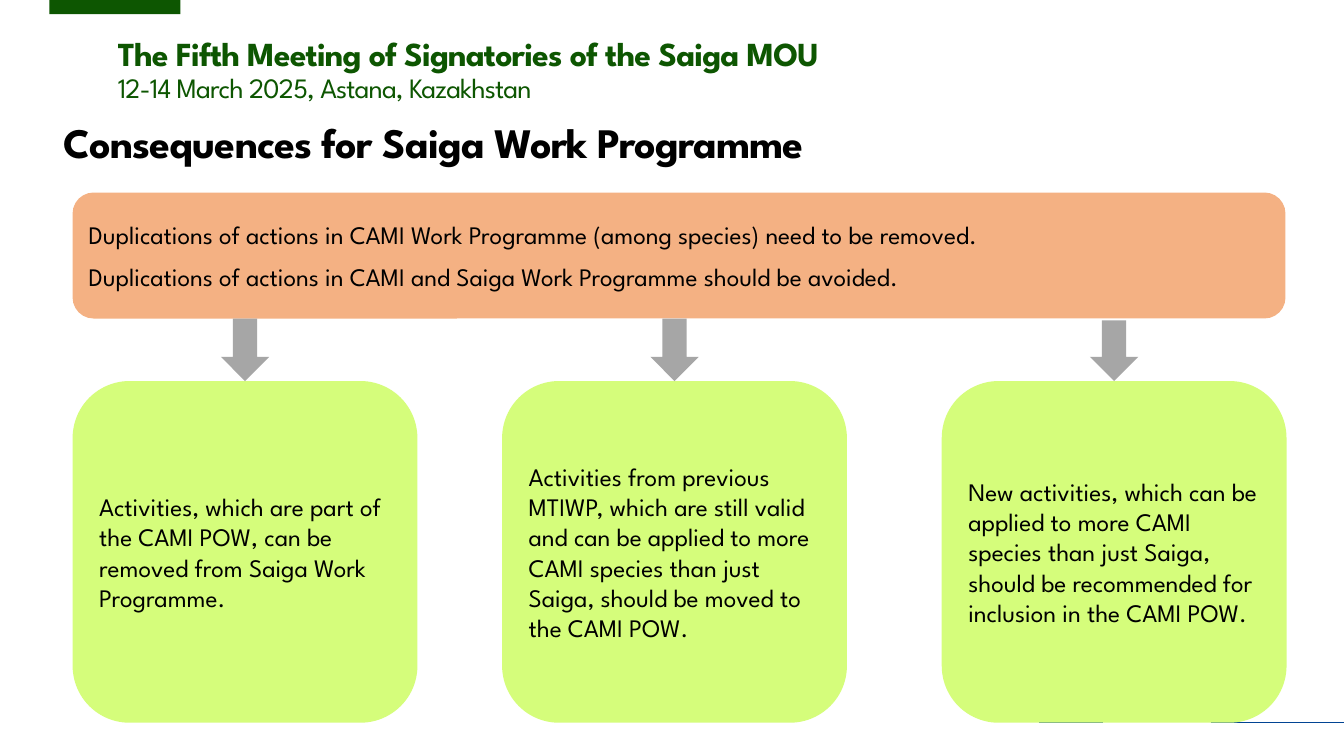
from dataclasses import dataclass

from pptx import Presentation
from pptx.dml.color import RGBColor
from pptx.enum.shapes import MSO_CONNECTOR, MSO_SHAPE
from pptx.enum.text import MSO_ANCHOR, MSO_AUTO_SIZE, PP_ALIGN
from pptx.oxml.ns import qn
from pptx.util import Inches, Pt

STRAIGHT = MSO_CONNECTOR.STRAIGHT
RECTANGLE = MSO_SHAPE.RECTANGLE
ROUNDED = MSO_SHAPE.ROUNDED_RECTANGLE
DOWN_ARROW = MSO_SHAPE.DOWN_ARROW
MIDDLE = MSO_ANCHOR.MIDDLE
GROW = MSO_AUTO_SIZE.SHAPE_TO_FIT_TEXT
LEFT = PP_ALIGN.LEFT


@dataclass(frozen=True)
class Theme:
    """Colours, font and type sizes of the slide."""

    font: str = "League Spartan"
    green: str = "0D5601"
    blue: str = "014493"
    orange: str = "F4B183"
    lime: str = "D5FD7B"
    grey: str = "A6A6A6"
    black: str = "000000"
    title: int = 30
    meeting: int = 24
    venue: int = 20
    body: int = 18


THEME = Theme()
TITLE = "Consequences for Saiga Work Programme"
MEETING = "The Fifth Meeting of Signatories of the Saiga MOU"
VENUE = "12-14 March 2025, Astana, Kazakhstan"
DUPLICATIONS = [
    "Duplications of actions in CAMI Work Programme (among species) need to be removed.",
    "Duplications of actions in CAMI and Saiga Work Programme should be avoided.",
]
CONSEQUENCES = [
    (0.72, 3.16, "Activities, which are part of the CAMI POW, can be removed from "
     "Saiga Work Programme."),
    (4.98, 3.16, "Activities from previous MTIWP, which are still valid and can be applied "
     "to more CAMI species than just Saiga, should be moved to the CAMI POW."),
    (9.34, 3.18, "New activities, which can be applied to more CAMI species than just "
     "Saiga, should be recommended for inclusion in the CAMI POW."),
]
CARD_TOP, CARD_WIDTH, CARD_HEIGHT = 3.78, 3.42, 3.39
ARROW_WIDTH = 0.48
FOOTER_Y = 7.17


def write(frame, lines, color, tracking=None, **paragraph_format):
    """Fill a text frame with (text, size, bold) lines."""
    frame.word_wrap = True
    frame.vertical_anchor = MIDDLE
    for index, (text, size, bold) in enumerate(lines):
        paragraph = frame.paragraphs[0] if index == 0 else frame.add_paragraph()
        for name, value in {"alignment": LEFT, "space_before": Pt(0), **paragraph_format}.items():
            setattr(paragraph, name, value)
        run = paragraph.add_run()
        run.text = text
        for name, value in {"name": THEME.font, "size": Pt(size), "bold": bold}.items():
            setattr(run.font, name, value)
        run.font.color.rgb = RGBColor.from_string(color)
        if tracking is not None:
            run.font._element.set("spc", str(tracking))


def add_heading(box, at, lines, color):
    """Place a heading box and write its tightly set lines."""
    for name, value in zip(("left", "top", "width", "height"), at):
        setattr(box, name, Inches(value))
    write(box.text_frame, lines, color, tracking=-60, line_spacing=0.9)
    box.text_frame.auto_size = GROW


def add_block(slide, kind, at, fill, texts=()):
    """Add a flat filled shape with optional body text."""
    block = slide.shapes.add_shape(kind, *map(Inches, at))
    block.shadow.inherit = False
    block.fill.solid()
    block.fill.fore_color.rgb = RGBColor.from_string(fill)
    block.line.fill.background()
    write(block.text_frame, [(text, THEME.body, False) for text in texts],
          THEME.black, space_after=Pt(8))


def add_footer_rule(slide, start, end):
    """Draw a thin horizontal rule at the foot of the slide."""
    rule = slide.shapes.add_connector(
        STRAIGHT, Inches(start), Inches(FOOTER_Y), Inches(end), Inches(FOOTER_Y))
    rule.line.color.rgb = RGBColor.from_string(THEME.blue)
    rule.line.width = Pt(1)
    properties = rule._element.spPr
    properties.append(properties.makeelement(qn("a:effectLst"), {}))


def add_consequence(slide, left, arrow_top, text):
    """Add a card and the arrow that leads down to it."""
    add_block(slide, ROUNDED, (left, CARD_TOP, CARD_WIDTH, CARD_HEIGHT), THEME.lime, [text])
    arrow_left = left + (CARD_WIDTH - ARROW_WIDTH) / 2
    add_block(slide, DOWN_ARROW,
              (arrow_left, arrow_top, ARROW_WIDTH, CARD_TOP - arrow_top), THEME.grey)


def main():
    """Build the slide and save it."""
    deck = Presentation()
    deck.slide_width, deck.slide_height = Inches(13.33), Inches(7.5)
    slide = deck.slides.add_slide(deck.slide_layouts[5])

    for start, end in ((12.01, 13.33), (10.31, 10.94)):
        add_footer_rule(slide, start, end)
    add_block(slide, RECTANGLE, (0.49, 0, 1.3, 0.14), THEME.green)

    meeting_at = (1.07, 0.32, 12.22, 0.77)
    meeting = slide.shapes.add_textbox(*map(Inches, meeting_at))
    add_heading(meeting, meeting_at,
                [(MEETING, THEME.meeting, True), (VENUE, THEME.venue, False)], THEME.green)
    add_heading(slide.shapes.title, (0.53, 1.16, 12.22, 0.56),
                [(TITLE, THEME.title, True)], THEME.black)

    add_block(slide, ROUNDED, (0.72, 1.91, 12.03, 1.25), THEME.orange, DUPLICATIONS)
    for left, arrow_top, text in CONSEQUENCES:
        add_consequence(slide, left, arrow_top, text)

    deck.save("out.pptx")


if __name__ == "__main__":
    main()
